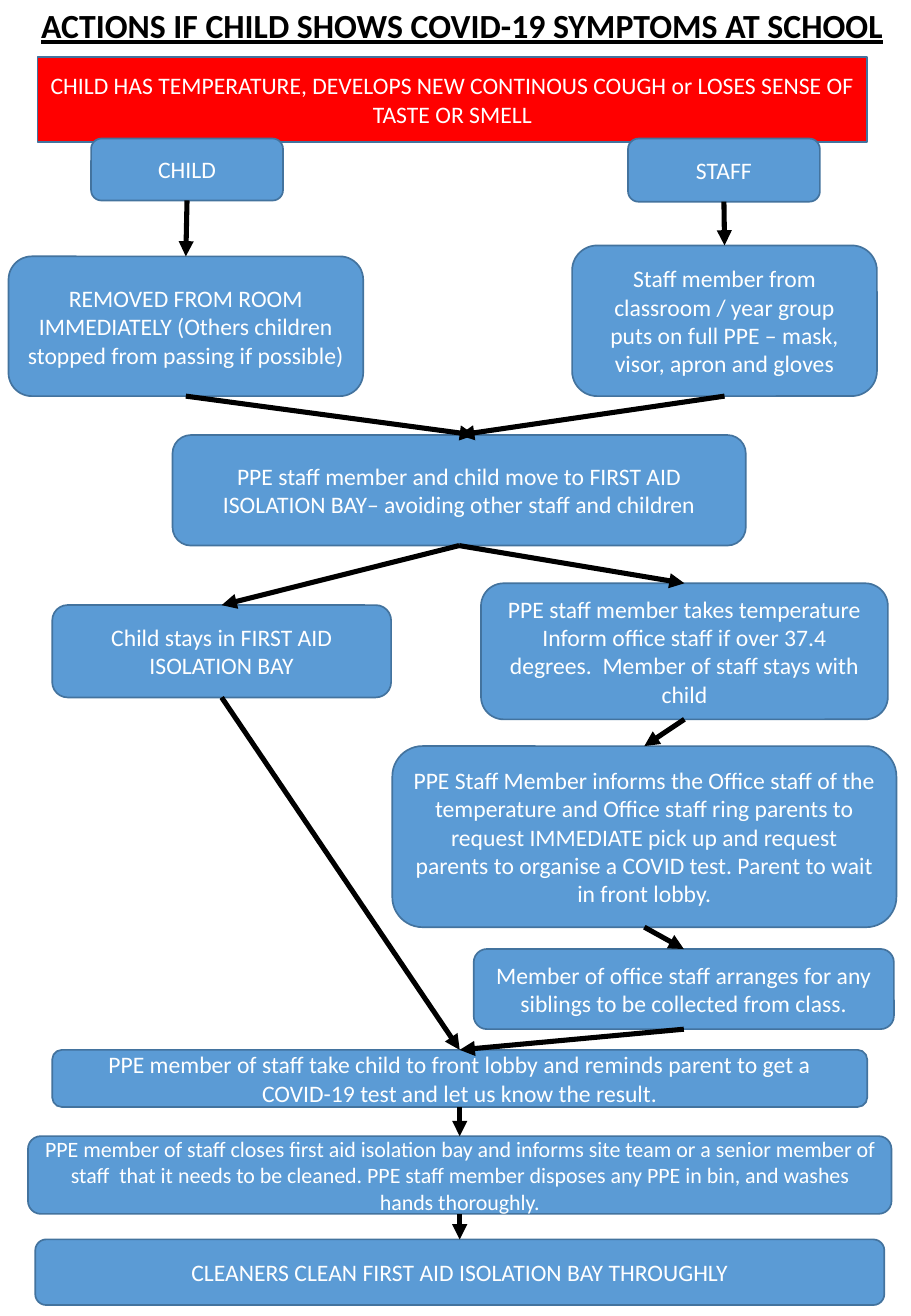
from dataclasses import dataclass

from lxml import etree
from pptx import Presentation
from pptx.dml.color import RGBColor
from pptx.enum.shapes import MSO_CONNECTOR, MSO_SHAPE
from pptx.enum.text import MSO_ANCHOR, MSO_AUTO_SIZE, PP_ALIGN
from pptx.oxml.ns import qn
from pptx.util import Inches, Pt

RECT, ROUND = MSO_SHAPE.RECTANGLE, MSO_SHAPE.ROUNDED_RECTANGLE
STRAIGHT = MSO_CONNECTOR.STRAIGHT
CENTER, MIDDLE = PP_ALIGN.CENTER, MSO_ANCHOR.MIDDLE
TOP, BOTTOM = 0, 2
FONT = "Calibri"
BLUE, RED, EDGE, WHITE, BLACK = "5B9BD5", "FF0000", "43739E", "FFFFFF", "000000"


@dataclass
class Step:
    name: str
    left: float
    top: float
    width: float
    height: float
    lines: tuple[str, ...]
    size: int = 14
    fill: str = BLUE
    shape: int = ROUND


@dataclass
class Arrow:
    start: str
    end: str
    shift: float = 0  # distance of the tip from the middle of the target's top


STEPS = [
    Step("symptoms", 0.31, 0.47, 6.83, 0.7,
         ("CHILD HAS TEMPERATURE, DEVELOPS NEW CONTINOUS COUGH or "
          "LOSES SENSE OF TASTE OR SMELL",), fill=RED, shape=RECT),
    Step("child", 0.75, 1.14, 1.58, 0.51, ("CHILD",)),
    Step("staff", 5.17, 1.14, 1.58, 0.52, ("STAFF",)),
    Step("removed", 0.07, 2.11, 2.92, 1.15,
         ("REMOVED FROM ROOM IMMEDIATELY (Others children stopped from "
          "passing if possible)",)),
    Step("ppe", 4.71, 2.02, 2.51, 1.24,
         ("Staff member from classroom / year group puts on full PPE – mask, "
          "visor, apron and gloves",)),
    Step("move", 1.42, 3.58, 4.72, 0.91,
         ("PPE staff member and child move to FIRST AID ISOLATION BAY– "
          "avoiding other staff and children",)),
    Step("temperature", 3.96, 4.8, 3.35, 1.12,
         ("PPE staff member takes temperature",
          "Inform office staff if over 37.4 degrees.  Member of staff stays "
          "with child")),
    Step("stay", 0.43, 4.98, 2.79, 0.76,
         ("Child stays in FIRST AID ISOLATION BAY",)),
    Step("office", 3.23, 6.14, 4.15, 1.49,
         ("PPE Staff Member informs the Office staff of the temperature and "
          "Office staff ring parents to request IMMEDIATE pick up and request "
          "parents to organise a COVID test. Parent to wait in front lobby.",)),
    Step("siblings", 3.9, 7.81, 3.46, 0.66,
         ("Member of office staff arranges for any siblings to be collected "
          "from class.",)),
    Step("lobby", 0.43, 8.64, 6.71, 0.47,
         ("PPE member of staff take child to front lobby and reminds parent "
          "to get a COVID-19 test and let us know the result.",)),
    Step("close", 0.23, 9.35, 7.11, 0.64,
         ("PPE member of staff closes first aid isolation bay and informs "
          "site team or a senior member of staff  that it needs to be "
          "cleaned. PPE staff member disposes any PPE in bin, and washes "
          "hands thoroughly.",), size=13),
    Step("clean", 0.29, 10.2, 6.99, 0.54,
         ("CLEANERS CLEAN FIRST AID ISOLATION BAY THROUGHLY",)),
]

ARROWS = [
    Arrow("staff", "ppe"),
    Arrow("child", "removed"),
    Arrow("ppe", "move"),
    Arrow("removed", "move", shift=0.13),
    Arrow("move", "stay"),
    Arrow("move", "temperature"),
    Arrow("temperature", "office"),
    Arrow("office", "siblings"),
    Arrow("siblings", "lobby"),
    Arrow("lobby", "close"),
    Arrow("close", "clean"),
    Arrow("stay", "lobby"),
]


def rgb(color: str) -> RGBColor:
    return RGBColor.from_string(color)


def add_run(p, text: str, size: int, color: str, heading: bool = False) -> None:
    p.alignment = CENTER
    r = p.add_run()
    r.text = text
    r.font.name, r.font.size = FONT, Pt(size)
    r.font.color.rgb = rgb(color)
    if heading:
        r.font.bold = r.font.underline = True


def add_step(s, step: Step):
    sp = s.shapes.add_shape(step.shape, Inches(step.left), Inches(step.top),
                            Inches(step.width), Inches(step.height))
    sp.shadow.inherit = False
    sp.fill.solid()
    sp.fill.fore_color.rgb = rgb(step.fill)
    sp.line.color.rgb = rgb(EDGE)
    sp.line.width = Pt(1)
    tf = sp.text_frame
    tf.word_wrap = True
    tf.vertical_anchor = MIDDLE
    for i, line in enumerate(step.lines):
        p = tf.add_paragraph() if i else tf.paragraphs[0]
        add_run(p, line, step.size, WHITE)
    return sp


def add_arrow(s, start, end, shift: float) -> None:
    tip_x = end.left + end.width // 2 + Inches(shift)
    line = s.shapes.add_connector(STRAIGHT, start.left + start.width // 2,
                                  start.top + start.height, tip_x, end.top)
    line.begin_connect(start, BOTTOM)
    if not shift:
        line.end_connect(end, TOP)
    line.line.color.rgb = rgb(BLACK)
    line.line.width = Pt(3)
    etree.SubElement(line.line._get_or_add_ln(), qn("a:tailEnd"), type="triangle")
    etree.SubElement(line._element.spPr, qn("a:effectLst"))


def add_title(s) -> None:
    box = s.shapes.add_textbox(Inches(0.21), Inches(-0.01), Inches(7.19), Inches(0.44))
    tf = box.text_frame
    tf.word_wrap = False
    tf.auto_size = MSO_AUTO_SIZE.SHAPE_TO_FIT_TEXT
    add_run(tf.paragraphs[0], "ACTIONS IF CHILD SHOWS COVID-19 SYMPTOMS AT SCHOOL",
            20, BLACK, heading=True)


def main() -> None:
    prs = Presentation()
    prs.slide_width, prs.slide_height = Inches(7.5), Inches(10.83)
    s = prs.slides.add_slide(prs.slide_layouts[6])

    # Steps of the procedure
    boxes = {step.name: add_step(s, step) for step in STEPS}

    # Heading
    add_title(s)

    # Flow between the steps
    for arrow in ARROWS:
        add_arrow(s, boxes[arrow.start], boxes[arrow.end], arrow.shift)

    prs.save("out.pptx")


if __name__ == "__main__":
    main()
